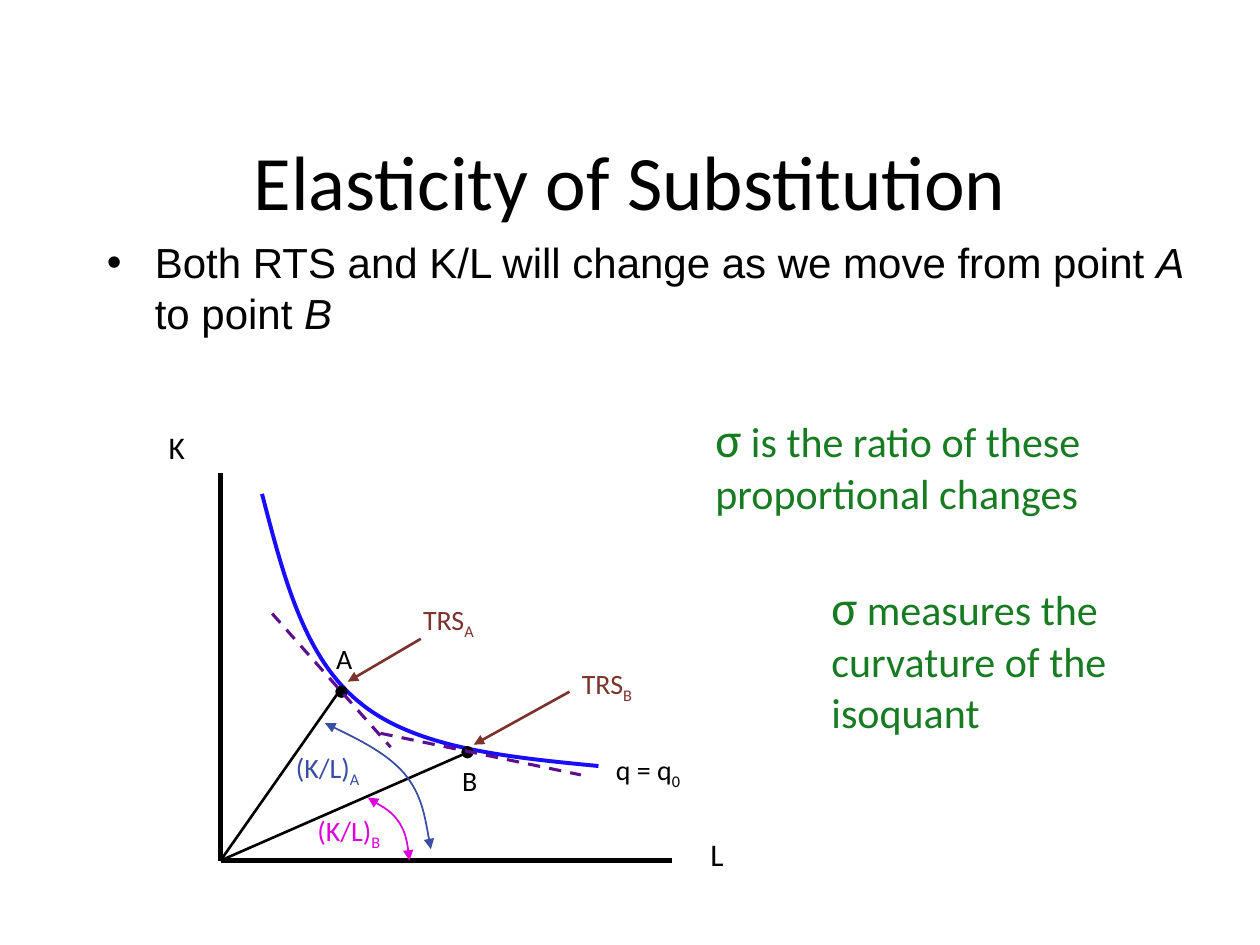
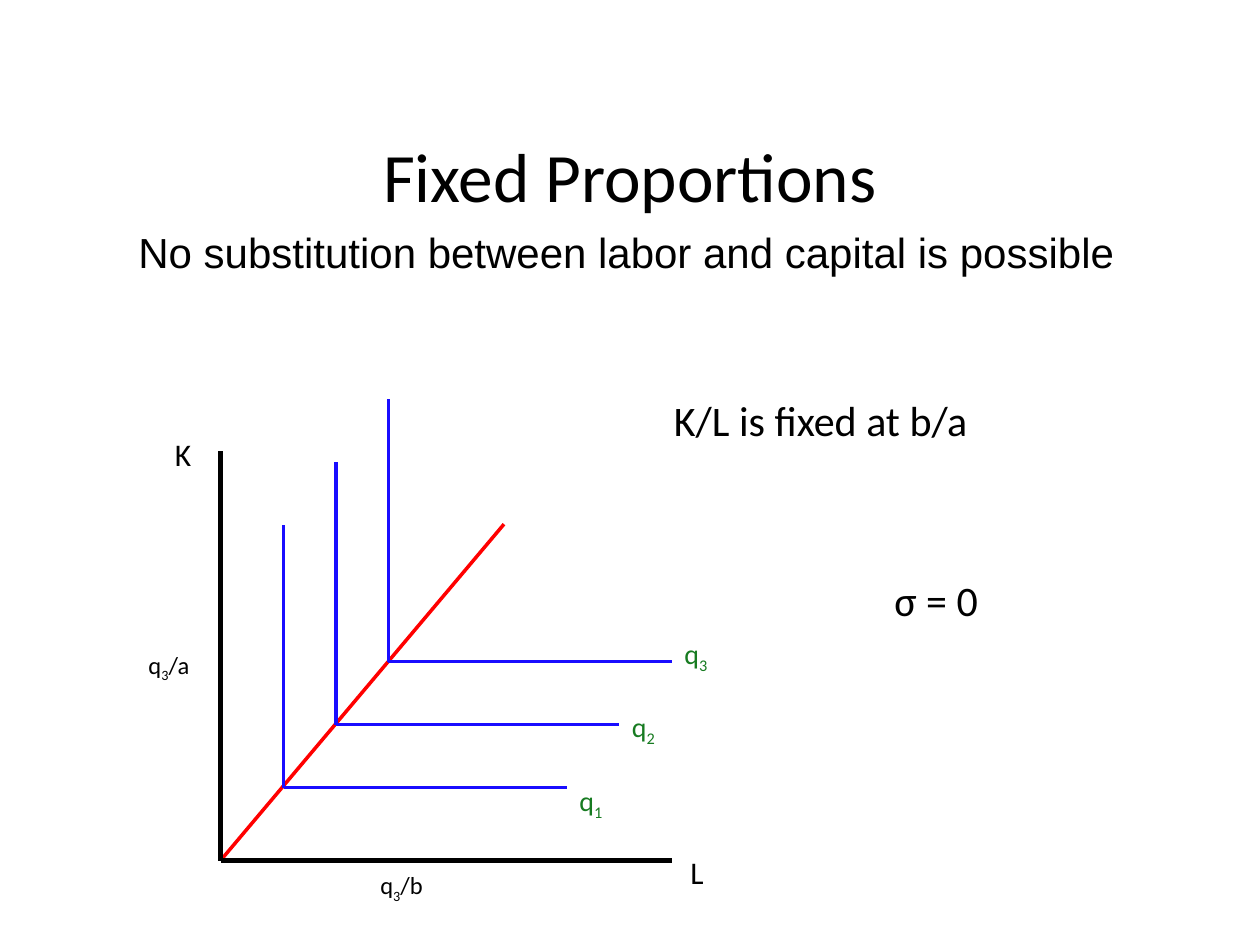
from lxml.etree import SubElement
from pptx import Presentation
from pptx.dml.color import RGBColor
from pptx.enum.dml import MSO_LINE
from pptx.enum.shapes import MSO_CONNECTOR, MSO_SHAPE
from pptx.enum.text import MSO_ANCHOR, MSO_AUTO_SIZE, PP_ALIGN
from pptx.oxml.ns import qn
from pptx.util import Inches, Pt

BLACK = RGBColor(0x00, 0x00, 0x00)
BLUE = RGBColor(0x19, 0x0D, 0xFF)
GREEN = RGBColor(0x17, 0x7B, 0x21)
PURPLE = RGBColor(0x5D, 0x0D, 0x8F)
BROWN = RGBColor(0x7B, 0x33, 0x2D)
NAVY = RGBColor(0x39, 0x4D, 0xA3)
MAGENTA = RGBColor(0xDC, 0x00, 0xDC)
RED = RGBColor(0xFF, 0x00, 0x00)

HEADING_FONT = "Calibri"
BODY_FONT = "Arial"
ORIGIN = (1.75, 6.83)
AXIS_RIGHT = 5.33

PLAIN = {}
SUB = {"baseline": "-25000"}
ITALIC = {"italic": True}
SIGMA = {"size": 28}

ELASTICITY_BODY = [("Both RTS and K/L will change as we move from point ", PLAIN),
                   ("A", ITALIC), (" to point ", PLAIN), ("B", ITALIC)]
FIXED_BODY = [("No substitution between labor and capital is possible", PLAIN)]

ISOQUANT = [(2.08, 3.92), (2.25, 4.57), (2.41, 5.22), (2.86, 5.58),
            (3.3, 5.94), (4.03, 6.01), (4.75, 6.08)]
ANGLE_ARCS = [
    ([(2.58, 5.74), (2.83, 5.86), (3.07, 5.98), (3.21, 6.14),
      (3.35, 6.31), (3.38, 6.53), (3.42, 6.74)], NAVY),
    ([(2.92, 6.33), (3.01, 6.39), (3.11, 6.44), (3.17, 6.53),
      (3.22, 6.61), (3.24, 6.72), (3.25, 6.83)], MAGENTA),
]
POINT_DOTS = [(2.67, 5.45), (3.67, 5.93)]
DOT_SIZE = 0.08
TANGENTS = [((3.02, 5.82), (4.61, 6.15)), ((2.16, 4.87), (3.1, 5.93))]
TRS_POINTERS = [((3.34, 5.07), (2.76, 5.41)), ((4.52, 5.49), (3.76, 5.91))]
RAY_ENDS = [(2.69, 5.49), (3.67, 5.99)]

ELASTICITY_LABELS = [
    ((5.54, 6.58, 0.31, 0.4), 18, BLACK, [[("L", PLAIN)]]),
    ((1.24, 3.35, 0.33, 0.4), 18, BLACK, [[("K", PLAIN)]]),
    ((2.57, 5.04, 0.29, 0.37), 16, BLACK, [[("A", PLAIN)]]),
    ((3.57, 6.01, 0.29, 0.37), 16, BLACK, [[("B", PLAIN)]]),
    ((4.79, 5.92, 0.72, 0.37), 16, BLACK, [[("q = q", PLAIN), ("0", SUB)]]),
    ((3.26, 4.73, 0.62, 0.37), 16, BROWN, [[("TRS", PLAIN), ("A", SUB)]]),
    ((4.52, 5.24, 0.61, 0.37), 16, BROWN, [[("TRS", PLAIN), ("B", SUB)]]),
    ((2.25, 5.91, 0.72, 0.37), 16, NAVY, [[("(K/L)", PLAIN), ("A", SUB)]]),
    ((2.42, 6.41, 0.72, 0.37), 16, MAGENTA, [[("(K/L)", PLAIN), ("B", SUB)]]),
    ((5.58, 3.19, 3.15, 0.98), 24, GREEN,
     [[("σ", SIGMA), (" is the ratio of these", PLAIN)],
      [("proportional changes", PLAIN)]]),
    ((6.5, 4.53, 2.41, 1.38), 24, GREEN,
     [[("σ", SIGMA), (" measures the", PLAIN)],
      [("curvature of the", PLAIN)], [("isoquant", PLAIN)]]),
]

EXPANSION_END = (4, 4.16)
FIRST_CORNER = (2.25, 6.25)
CORNER_STEP = (1.25 / 3, -0.5)
ISOQUANT_RISE, ISOQUANT_RUN = 2.08, 2.25
ISOQUANT_LABEL_TOPS = [6.17, 5.58, 5]

FIXED_LABELS = [
    ((5.38, 6.72, 0.31, 0.4), 18, BLACK, [[("L", PLAIN)]]),
    ((1.29, 3.4, 0.33, 0.4), 18, BLACK, [[("K", PLAIN)]]),
    ((7, 4.51, 0.89, 0.5), 24, BLACK, [[("σ = 0", PLAIN)]]),
    ((5.25, 3.08, 2.64, 0.51), 24, BLACK, [[("K/L is fixed at b/a", PLAIN)]]),
    ((2.92, 6.86, 0.56, 0.33), 14, BLACK, [[("q", PLAIN), ("3", SUB), ("/b", PLAIN)]]),
    ((1.08, 5.11, 0.55, 0.33), 14, BLACK, [[("q", PLAIN), ("3", SUB), ("/a", PLAIN)]]),
]


def inches(values):
    return [Inches(value) for value in values]


def add_text(slide, box, size, color, paragraphs, font=HEADING_FONT, wrap=False):
    shape = slide.shapes.add_textbox(*inches(box))
    frame = shape.text_frame
    frame.word_wrap = wrap
    frame.auto_size = MSO_AUTO_SIZE.NONE if wrap else MSO_AUTO_SIZE.SHAPE_TO_FIT_TEXT
    for index, runs in enumerate(paragraphs):
        paragraph = frame.add_paragraph() if index else frame.paragraphs[0]
        for text, style in runs:
            run = paragraph.add_run()
            run.text = text
            run.font.name = font
            run.font.size = Pt(style.get("size", size))
            run.font.color.rgb = color
            if "italic" in style:
                run.font.italic = True
            if "baseline" in style:
                run._r.get_or_add_rPr().set("baseline", style["baseline"])
    return frame


def add_title(slide, text, size, height):
    frame = add_text(slide, (0.75, 1, 8.5, height), size, BLACK, [[(text, PLAIN)]], wrap=True)
    frame.vertical_anchor = MSO_ANCHOR.MIDDLE
    frame.paragraphs[0].alignment = PP_ALIGN.CENTER


def add_labels(slide, labels):
    for label in labels:
        add_text(slide, *label)


def add_bullet(paragraph):
    properties = paragraph._p.get_or_add_pPr()
    properties.set("marL", str(Inches(0.38)))
    properties.set("indent", str(-Inches(0.38)))
    paragraph.space_before = Pt(4.8)
    SubElement(properties, qn("a:buFont"), typeface=BODY_FONT)
    SubElement(properties, qn("a:buChar"), char="•")


def add_arrowheads(line, *ends):
    for end in ends:
        SubElement(line._get_or_add_ln(), qn(f"a:{end}"), type="triangle")


def add_line(slide, start, end, color, width):
    connector = slide.shapes.add_connector(MSO_CONNECTOR.STRAIGHT, *inches(start + end))
    connector.line.color.rgb = color
    connector.line.width = Pt(width)
    SubElement(connector._element.spPr, qn("a:effectLst"))
    return connector.line


def add_curve(slide, points, color, width):
    start, *rest = [tuple(inches(point)) for point in points]
    builder = slide.shapes.build_freeform(*start)
    builder.add_line_segments(rest, close=False)
    shape = builder.convert_to_shape()
    outline = next(shape._element.iter(qn("a:path")))
    segments = outline.findall(qn("a:lnTo"))
    for first in range(0, len(segments), 3):
        bezier = SubElement(outline, qn("a:cubicBezTo"))
        for segment in segments[first:first + 3]:
            bezier.append(segment[0])
            outline.remove(segment)
    shape.shadow.inherit = False
    shape.fill.background()
    shape.line.color.rgb = color
    shape.line.width = Pt(width)
    return shape.line


def add_axes(slide, top):
    add_line(slide, (ORIGIN[0], top), ORIGIN, BLACK, 3)
    add_line(slide, ORIGIN, (AXIS_RIGHT, ORIGIN[1]), BLACK, 3)


def add_dot(slide, left, top):
    dot = slide.shapes.add_shape(MSO_SHAPE.OVAL, *inches((left, top, DOT_SIZE, DOT_SIZE)))
    dot.shadow.inherit = False
    dot.fill.solid()
    dot.fill.fore_color.rgb = BLACK
    dot.line.color.rgb = BLACK
    dot.line.width = Pt(1.25)


def build_elasticity(slide):
    add_title(slide, "Elasticity of Substitution", 44, 0.86)
    add_axes(slide, 3.75)
    add_curve(slide, ISOQUANT, BLUE, 2.25)
    body = add_text(slide, (0.75, 1.83, 8.75, 1.13), 24, BLACK, [ELASTICITY_BODY],
                    font=BODY_FONT, wrap=True)
    add_bullet(body.paragraphs[0])
    for left, top in POINT_DOTS:
        add_dot(slide, left, top)
    for start, end in TANGENTS:
        add_line(slide, start, end, PURPLE, 1.75).dash_style = MSO_LINE.DASH
    for start, end in TRS_POINTERS:
        add_arrowheads(add_line(slide, start, end, BROWN, 1.5), "tailEnd")
    for end in RAY_ENDS:
        add_line(slide, ORIGIN, end, BLACK, 1.5)
    for points, color in ANGLE_ARCS:
        add_arrowheads(add_curve(slide, points, color, 1), "headEnd", "tailEnd")
    add_labels(slide, ELASTICITY_LABELS)


def build_fixed_proportions(slide):
    add_line(slide, ORIGIN, EXPANSION_END, RED, 2)
    add_title(slide, "Fixed Proportions", 39.6, 0.78)
    add_axes(slide, 3.58)
    for index, label_top in enumerate(ISOQUANT_LABEL_TOPS):
        x, y = [first + index * step for first, step in zip(FIRST_CORNER, CORNER_STEP)]
        right = x + ISOQUANT_RUN
        add_line(slide, (x, y - ISOQUANT_RISE), (x, y), BLUE, 2.25)
        add_line(slide, (x, y), (right, y), BLUE, 2.25)
        add_text(slide, (right, label_top, 0.4, 0.37), 16, GREEN,
                 [[("q", PLAIN), (str(index + 1), SUB)]])
    add_text(slide, (1, 1.75, 8.67, 0.51), 24, BLACK, [FIXED_BODY],
             font=BODY_FONT, wrap=True)
    add_labels(slide, FIXED_LABELS)


def main():
    presentation = Presentation()
    presentation.slide_width = Inches(10)
    presentation.slide_height = Inches(7.5)
    for build in (build_elasticity, build_fixed_proportions):
        build(presentation.slides.add_slide(presentation.slide_layouts[6]))
    presentation.save("out.pptx")


if __name__ == "__main__":
    main()
